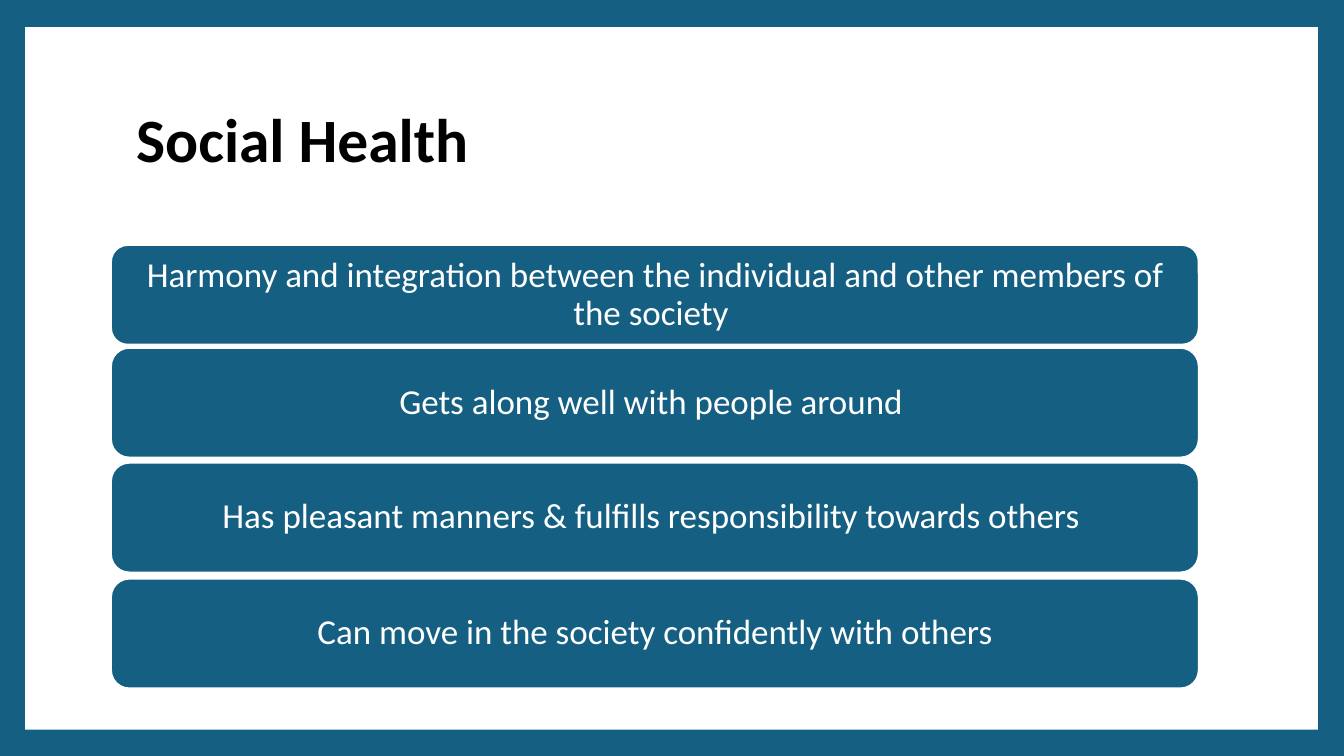
from dataclasses import dataclass

from pptx import Presentation
from pptx import util as u
from pptx.dml.color import RGBColor
from pptx.enum import shapes, text

HUES = {"teal": "156082", "white": "FFFFFF", "black": "000000"}
FONT = "Calibri"
LEFT, WIDTH = 1.1, 10.79


@dataclass
class Bar:
    top: float
    height: float
    label: str


# A trailing space counts in the centring of a line.
BARS = [
    Bar(2.43, 0.99, "Harmony and integration between the individual "
                    "and other members of the society "),
    Bar(3.45, 1.09, "Gets along well with people around "),
    Bar(4.59, 1.09, "Has pleasant manners & fulfills responsibility towards others "),
    Bar(5.74, 1.09, "Can move in the society confidently with others"),
]


def hue(name: str) -> RGBColor:
    return RGBColor.from_string(HUES[name])


def add_block(slide, kind, left: float, top: float, width: float, height: float, fill: str):
    block = slide.shapes.add_shape(
        kind, u.Inches(left), u.Inches(top), u.Inches(width), u.Inches(height))
    block.shadow.inherit = False
    block.fill.solid()
    block.fill.fore_color.rgb = hue(fill)
    return block


def write(frame, words: str, size: int, color: str, align, bold: bool = False) -> None:
    frame.word_wrap = True
    frame.auto_size = text.MSO_AUTO_SIZE.NONE
    frame.vertical_anchor = text.MSO_ANCHOR.MIDDLE
    frame.margin_left = frame.margin_right = u.Inches(0.1)
    frame.margin_top = frame.margin_bottom = u.Inches(0.05)
    para = frame.paragraphs[0]
    para.alignment = align
    para.line_spacing = 0.9
    run = para.add_run()
    run.text = words
    run.font.name = FONT
    run.font.size = u.Pt(size)
    run.font.bold = bold
    run.font.color.rgb = hue(color)


def add_title(slide, words: str) -> None:
    title = slide.shapes.title
    title.left, title.top = u.Inches(1.25), u.Inches(0.67)
    title.width, title.height = u.Inches(10.8), u.Inches(1.48)
    write(title.text_frame, words, 44, "black", text.PP_ALIGN.LEFT, True)


def add_panel(slide) -> None:
    """Draw the white panel and set it behind the title."""
    panel = add_block(slide, shapes.MSO_SHAPE.RECTANGLE, 0.25, 0.27, 12.82, 6.97, "white")
    panel.line.fill.background()
    slide.shapes.title.element.addprevious(panel.element)


def add_bar(slide, bar: Bar) -> None:
    block = add_block(slide, shapes.MSO_SHAPE.ROUNDED_RECTANGLE,
                      LEFT, bar.top, WIDTH, bar.height, "teal")
    block.line.color.rgb = hue("white")
    block.line.width = u.Pt(1.5)
    write(block.text_frame, bar.label, 25, "white", text.PP_ALIGN.CENTER)


def main() -> None:
    deck = Presentation()
    deck.slide_width, deck.slide_height = u.Inches(13.33), u.Inches(7.5)
    slide = deck.slides.add_slide(deck.slide_layouts.get_by_name("Title Only"))
    slide.background.fill.solid()
    slide.background.fill.fore_color.rgb = hue("teal")
    add_panel(slide)
    add_title(slide, "Social Health")
    for bar in BARS:
        add_bar(slide, bar)
    deck.save("out.pptx")


if __name__ == "__main__":
    main()
